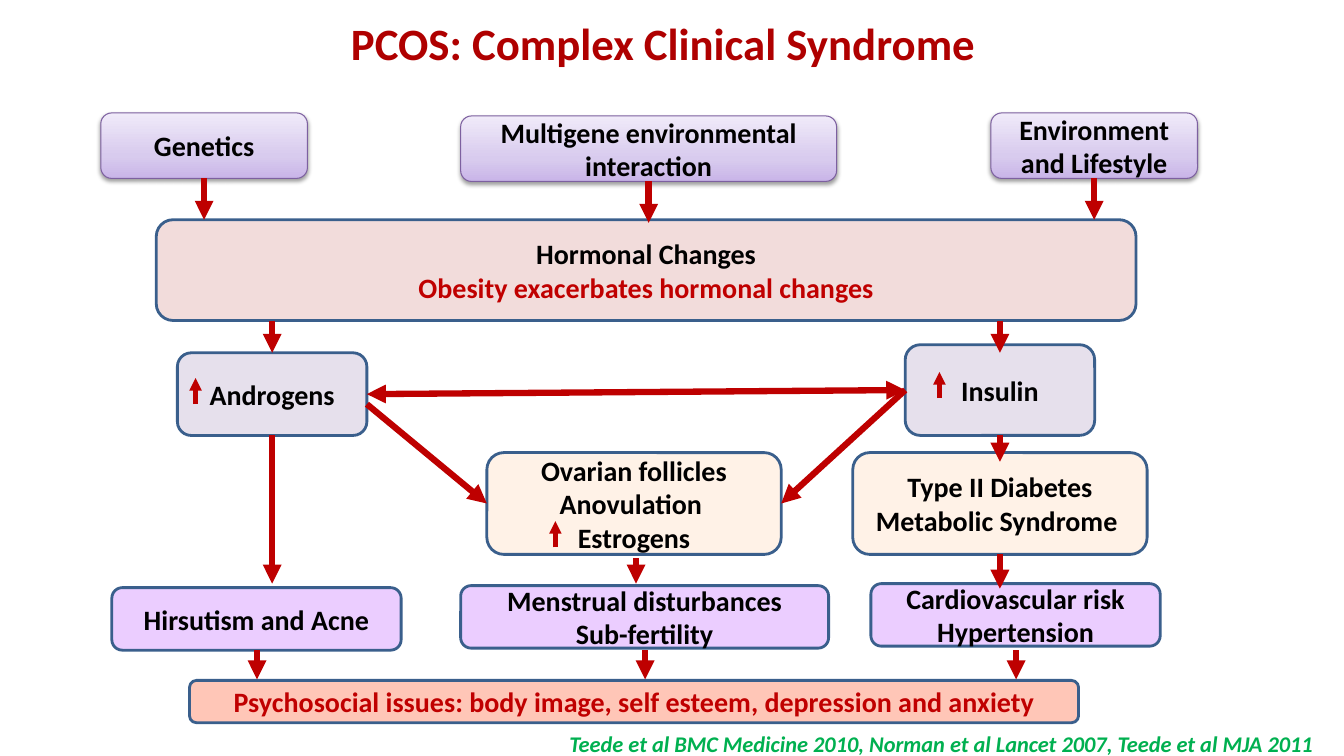
import copy
import dataclasses

import pptx
import pptx.dml.color
import pptx.enum.shapes
import pptx.enum.text
import pptx.oxml
import pptx.oxml.ns
import pptx.util

CELLS_PER_INCH = 10
FONT = "Calibri"
BLACK, RED, ARROW_RED = "000000", "C00000", "BE0000"
OUTLINE, CAUSE_OUTLINE = "3A5F8C", "7D60A0"
CAUSE_STOPS = [(0, "C9B5E8"), (0.35, "D8CBEE"), (1, "F0EAF9")]
NAMESPACE = pptx.oxml.ns.nsdecls("a")
SOFT_SHADOW = (
    f'<a:effectLst {NAMESPACE}><a:outerShdw blurRad="40000" dist="20000" dir="5400000" '
    'rotWithShape="0"><a:srgbClr val="000000"><a:alpha val="38000"/></a:srgbClr>'
    "</a:outerShdw></a:effectLst>"
)
CENTER = pptx.enum.text.PP_ALIGN.CENTER


@dataclasses.dataclass
class Box:
    left: float
    top: float
    width: float
    height: float

    @property
    def right(self):
        return self.left + self.width

    @property
    def bottom(self):
        return self.top + self.height

    @property
    def center(self):
        return self.left + self.width / 2

    @property
    def middle(self):
        return self.top + self.height / 2

    def inner(self, column, row, width, height):
        return Box(self.left + column, self.top + row, width, height)

    def lengths(self):
        return [cells(value) for value in (self.left, self.top, self.width, self.height)]


def cells(count):
    return pptx.util.Inches(count / CELLS_PER_INCH)


def color(value):
    return pptx.dml.color.RGBColor.from_string(value)


def add_lines(frame, lines, size=20, alignment=CENTER, italic=False):
    frame.word_wrap = True
    for index, (text, text_color) in enumerate(lines):
        paragraph = frame.add_paragraph() if index else frame.paragraphs[0]
        paragraph.alignment = alignment
        run = paragraph.add_run()
        run.text = text
        run.font.name = FONT
        run.font.size = pptx.util.Pt(size)
        run.font.bold = True
        run.font.italic = italic
        run.font.color.rgb = color(text_color)


def add_node(slide, box, lines, fill=None):
    shape = slide.shapes.add_shape(
        pptx.enum.shapes.MSO_SHAPE.ROUNDED_RECTANGLE, *box.lengths())
    shape.shadow.inherit = False
    if fill:
        shape.fill.solid()
        shape.fill.fore_color.rgb = color(fill)
    shape.line.color.rgb = color(OUTLINE if fill else CAUSE_OUTLINE)
    shape.line.width = pptx.util.Pt(2 if fill else 0.75)
    shape.text_frame.vertical_anchor = pptx.enum.text.MSO_ANCHOR.MIDDLE
    add_lines(shape.text_frame, lines)
    return shape


def shade_cause(shape):
    shape.fill.gradient()
    shape.fill.gradient_angle = 90
    properties = shape._element.spPr
    stop_list = properties.find(pptx.oxml.ns.qn("a:gradFill")).find(pptx.oxml.ns.qn("a:gsLst"))
    stop_list.append(copy.deepcopy(stop_list[0]))
    for stop, (position, value) in zip(shape.fill.gradient_stops, CAUSE_STOPS):
        stop.position = position
        stop.color.rgb = color(value)
    properties.remove(properties.find(pptx.oxml.ns.qn("a:effectLst")))
    properties.append(pptx.oxml.parse_xml(SOFT_SHADOW))


def add_arrow(slide, start, end, width=4.5, ends=("tailEnd",)):
    connector = slide.shapes.add_connector(
        pptx.enum.shapes.MSO_CONNECTOR.STRAIGHT,
        *[cells(value) for value in (*start, *end)])
    connector.line.color.rgb = color(ARROW_RED)
    connector.line.width = pptx.util.Pt(width)
    properties = connector._element.spPr
    line = properties.find(pptx.oxml.ns.qn("a:ln"))
    for end_name in ends:
        line.append(pptx.oxml.parse_xml(f'<a:{end_name} {NAMESPACE} type="triangle"/>'))
    properties.append(pptx.oxml.parse_xml(f"<a:effectLst {NAMESPACE}/>"))


def add_drop(slide, column, row, length):
    add_arrow(slide, (column, row), (column, row + length))


def add_increase_mark(slide, box, column, row):
    column, row = box.left + column, box.top + row
    add_arrow(slide, (column, row), (column, row - 2.6), width=3)


def draw_title(slide, box):
    title = slide.shapes.title
    title.left, title.top, title.width, title.height = box.lengths()
    title.text_frame.vertical_anchor = pptx.enum.text.MSO_ANCHOR.MIDDLE
    add_lines(title.text_frame, [("PCOS: Complex Clinical Syndrome", "AF0000")], size=32)


def draw_citation(slide, box):
    text_box = slide.shapes.add_textbox(*box.lengths())
    text = "Teede et al BMC Medicine 2010, Norman et al Lancet 2007, Teede et al MJA 2011"
    add_lines(text_box.text_frame, [(text, "00B050")], size=16,
              alignment=pptx.enum.text.PP_ALIGN.RIGHT, italic=True)


def draw_causes(slide, box):
    nodes = {
        "Genetics": box.inner(0, 0, 20.5, 6.5),
        "Multigene environmental interaction": box.inner(35.7, 0.3, 37.3, 6.5),
        "Environment and Lifestyle": box.inner(88.3, 0, 20.5, 6.5),
    }
    for text, node in nodes.items():
        shade_cause(add_node(slide, node, [(text, BLACK)]))
    return list(nodes.values())


def draw_hormones(slide, box):
    add_node(slide, box, [("Hormonal Changes", BLACK),
                          ("Obesity exacerbates hormonal changes", RED)], "F2DCDB")
    return box


def draw_mechanisms(slide, box):
    insulin = box.inner(72.2, 0, 18.8, 9)
    androgens = box.inner(0, 0.8, 18.8, 8.2)
    ovary = box.inner(30.7, 10.7, 29.2, 10.1)
    diabetes = box.inner(67, 10.7, 29.2, 10.1)
    for node, fill, texts in [
        (insulin, "E6E0EC", ["Insulin"]),
        (androgens, "E6E0EC", ["Androgens"]),
        (ovary, "FFF2E7", ["Ovarian follicles", "Anovulation ", "Estrogens"]),
        (diabetes, "FFF2E7", ["Type II Diabetes", "Metabolic Syndrome "]),
    ]:
        add_node(slide, node, [(text, BLACK) for text in texts], fill)
    add_increase_mark(slide, androgens, 1.8, 5.1)
    add_increase_mark(slide, insulin, 3.4, 5.3)
    add_increase_mark(slide, ovary, 6.8, 9.4)
    return androgens, insulin, ovary, diabetes


def draw_outcomes(slide, box):
    for node, texts in [
        (box.inner(75.3, 0, 28.7, 6.2), ["Cardiovascular risk", "Hypertension"]),
        (box.inner(34.6, 0.2, 36.5, 6.2), ["Menstrual disturbances", "Sub-fertility"]),
        (box.inner(0, 0.4, 28.7, 6.2), ["Hirsutism and Acne"]),
    ]:
        add_node(slide, node, [(text, BLACK) for text in texts], "EBCDFF")


def draw_psychosocial(slide, box):
    text = "Psychosocial issues: body image, self esteem, depression and anxiety"
    add_node(slide, box, [(text, RED)], "FFC6B7")


def draw_links(slide, causes, hormones, mechanisms, outcomes):
    androgens, insulin, ovary, diabetes = mechanisms
    for cause in causes:
        add_drop(slide, cause.center, cause.bottom, 4.1)
    for node in (androgens, insulin):
        add_drop(slide, node.center, hormones.bottom, 3.2)
    add_drop(slide, insulin.center, insulin.bottom, 2.6)
    add_drop(slide, insulin.center, diabetes.bottom, 3.4)
    add_drop(slide, ovary.center + 0.2, ovary.bottom + 0.4, 2.5)
    add_drop(slide, androgens.center, androgens.bottom, outcomes.top - androgens.bottom)
    for column in (14.4, 52.9, 89.7):
        add_drop(slide, outcomes.left + column, outcomes.bottom, 2.9)
    add_arrow(slide, (androgens.right, androgens.middle), (insulin.left, insulin.middle),
              ends=("headEnd", "tailEnd"))
    add_arrow(slide, (androgens.right, androgens.middle + 1), (ovary.left, ovary.middle))
    add_arrow(slide, (insulin.left, insulin.middle), (ovary.right, ovary.middle))


def main():
    presentation = pptx.Presentation()
    presentation.slide_width = cells(133.33)
    presentation.slide_height = cells(75)
    slide = presentation.slides.add_slide(presentation.slide_layouts[5])
    draw_title(slide, Box(8.3, -3, 115, 14.5))
    draw_citation(slide, Box(15.5, 71.9, 115.8, 3.7))
    causes = draw_causes(slide, Box(10, 11.2, 108.8, 6.8))
    hormones = draw_hormones(slide, Box(15.5, 21.8, 97.2, 10))
    mechanisms = draw_mechanisms(slide, Box(17.6, 34.2, 96.2, 20.8))
    outcomes = Box(11.1, 57.9, 104, 6.6)
    draw_outcomes(slide, outcomes)
    draw_psychosocial(slide, Box(18.8, 67.5, 88.2, 4.2))
    draw_links(slide, causes, hormones, mechanisms, outcomes)
    presentation.save("out.pptx")


if __name__ == "__main__":
    main()
